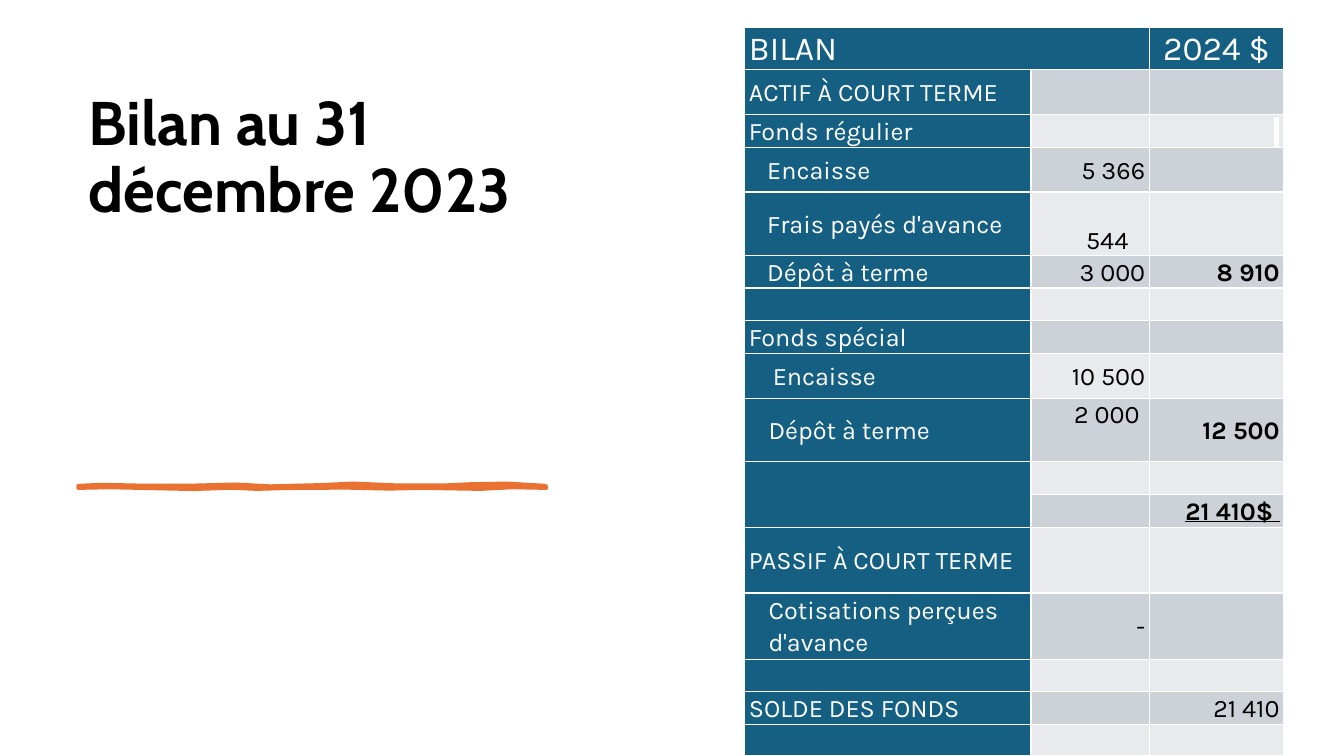
from lxml.etree import SubElement as Sub
from pptx import Presentation
from pptx.dml.color import RGBColor
from pptx.enum.text import MSO_ANCHOR as Anchor, MSO_AUTO_SIZE as Auto, PP_ALIGN as Align
from pptx.oxml import parse_xml
from pptx.oxml.ns import qn
from pptx.util import Pt

TITLE = "Bilan au 31 décembre 2023"
BLUE, DARK, LIGHT = "156082", "CCD2D8", "E8EAED"
WHITE, BLACK, ORANGE = "FFFFFF", "000000", "E97132"

ROWS = [
    (30.5, "BILAN", "", "2024 $"),
    (32, "ACTIF À COURT TERME", "", ""),
    (23.5, "Fonds régulier", "", " "),
    (32, "Encaisse", "5 366", ""),
    (45.5, "Frais payés d'avance", "544", ""),
    (23, "Dépôt à terme", "3 000", "8 910"),
    (23.5, "", "", ""),
    (23.5, "Fonds spécial", "", ""),
    (32, "Encaisse", "10 500", ""),
    (45, "Dépôt à terme", "2 000", "12 500"),
    (23.5, "", "", ""),
    (23.5, "", "", "21 410$ "),
    (47, "PASSIF À COURT TERME", "", ""),
    (47.5, "Cotisations perçues d'avance", "", ""),
    (23, "", "", ""),
    (23.5, "SOLDE DES FONDS", "", "21 410"),
    (21.5, "", "", ""),
]
ROWS[13] = (47.5, "Cotisations perçues d'avance", "-", "")
COLS = [204.5, 84.5, 96]
INDENT = {3: 13, 4: 13, 5: 13, 8: 17, 9: 14, 13: 14}
SHIFT = {(4, 1): (Anchor.BOTTOM, 15), (9, 1): (Anchor.TOP, 7)}
BOLD = {(5, 2), (9, 2), (11, 2)}
MERGES = [((0, 0), (0, 1)), ((10, 0), (11, 0))]
TOP = [(56, 347.2), (72, 346.4), (101, 347), (138, 347), (168, 346.2), (193, 347.5),
       (230, 346.6), (252, 345.5), (282, 346.8), (316, 346.9), (336, 346), (362, 345.5), (390, 347.2)]
BASE = [(390, 348.5), (366, 348), (343, 349.2), (302, 348.5), (278, 349), (247, 348.3),
        (203, 348.6), (184, 349.2), (165, 348.4), (138, 349.3), (100, 348.5), (78, 348), (56, 348.5)]


def tint(code):
    return RGBColor.from_string(code)


def put(item, **form):
    for key, val in form.items():
        setattr(item, key, val)


def paint(item, code):
    item.fill.solid()
    item.fill.fore_color.rgb = tint(code)


def edge(cell):
    prop = cell._tc.get_or_add_tcPr()
    for spot, side in enumerate("LRTB"):
        line = parse_xml(
            f'<a:ln{side} xmlns:a="http://schemas.openxmlformats.org/drawingml/2006/main" w="12700">'
            f'<a:solidFill><a:srgbClr val="{WHITE}"/></a:solidFill></a:ln{side}>')
        prop.insert(spot, line)


def write(cell, row, col, text):
    para = cell.text_frame.paragraphs[0]
    side = Align.RIGHT if col else Align.LEFT
    put(para, line_spacing=1.07, alignment=side if row else (Align.CENTER if col else Align.LEFT))
    if not text:
        return
    run = para.add_run()
    run.text = text
    put(run.font, name="Karla", size=Pt(18 if row else 24),
        bold=(row, col) in BOLD, underline=(row, col) == (11, 2))
    run.font.color.rgb = tint(BLACK if row and col else WHITE)
    if text == " ":
        mark = Sub(run._r.get_or_add_rPr(), qn("a:highlight"))
        Sub(mark, qn("a:srgbClr")).set("val", WHITE)
        run._r.rPr.find(qn("a:solidFill")).addnext(mark)


def head(slide):
    box = slide.shapes.title
    put(box, left=Pt(56), top=Pt(62.5), width=Pt(317.5), height=Pt(124))
    frame = box.text_frame
    put(frame, text=TITLE, word_wrap=True, auto_size=Auto.NONE, vertical_anchor=Anchor.TOP)
    para = frame.paragraphs[0]
    put(para, alignment=Align.LEFT, line_spacing=0.9)
    put(para.runs[0].font, name="Cabin", size=Pt(44), bold=True)
    para.runs[0].font.color.rgb = tint(BLACK)


def stroke(slide):
    first, *rest = [(Pt(x), Pt(y)) for x, y in TOP + BASE]
    form = slide.shapes.build_freeform(*first)
    form.add_line_segments(rest, close=True)
    wave = form.convert_to_shape()
    wave.shadow.inherit = False
    paint(wave, ORANGE)
    wave.line.color.rgb = tint(ORANGE)
    wave.line.width = Pt(3)
    Sub(wave.line._get_or_add_ln(), qn("a:round"))


def sheet(slide):
    high = sum(row[0] for row in ROWS)
    grid = slide.shapes.add_table(len(ROWS), len(COLS), Pt(532), Pt(19.25),
                                  Pt(sum(COLS)), Pt(high)).table
    for col, wide in enumerate(COLS):
        grid.columns[col].width = Pt(wide)
    for row, (tall, *texts) in enumerate(ROWS):
        grid.rows[row].height = Pt(tall)
        for col, text in enumerate(texts):
            cell = grid.cell(row, col)
            spot, right = SHIFT.get((row, col), (Anchor.MIDDLE, 3))
            left = 3 + (INDENT.get(row, 0) if col == 0 else 0)
            put(cell, margin_left=Pt(left), margin_right=Pt(right), margin_top=0,
                margin_bottom=0, vertical_anchor=spot)
            band = DARK if row % 2 else LIGHT
            paint(cell, BLUE if row == 0 or col == 0 else band)
            edge(cell)
            write(cell, row, col, text)
    for start, end in MERGES:
        grid.cell(*start).merge(grid.cell(*end))


def main():
    deck = Presentation()
    put(deck, slide_width=Pt(960), slide_height=Pt(540))
    slide = deck.slides.add_slide(deck.slide_layouts[5])
    head(slide)
    stroke(slide)
    sheet(slide)
    deck.save("out.pptx")


if __name__ == "__main__":
    main()
